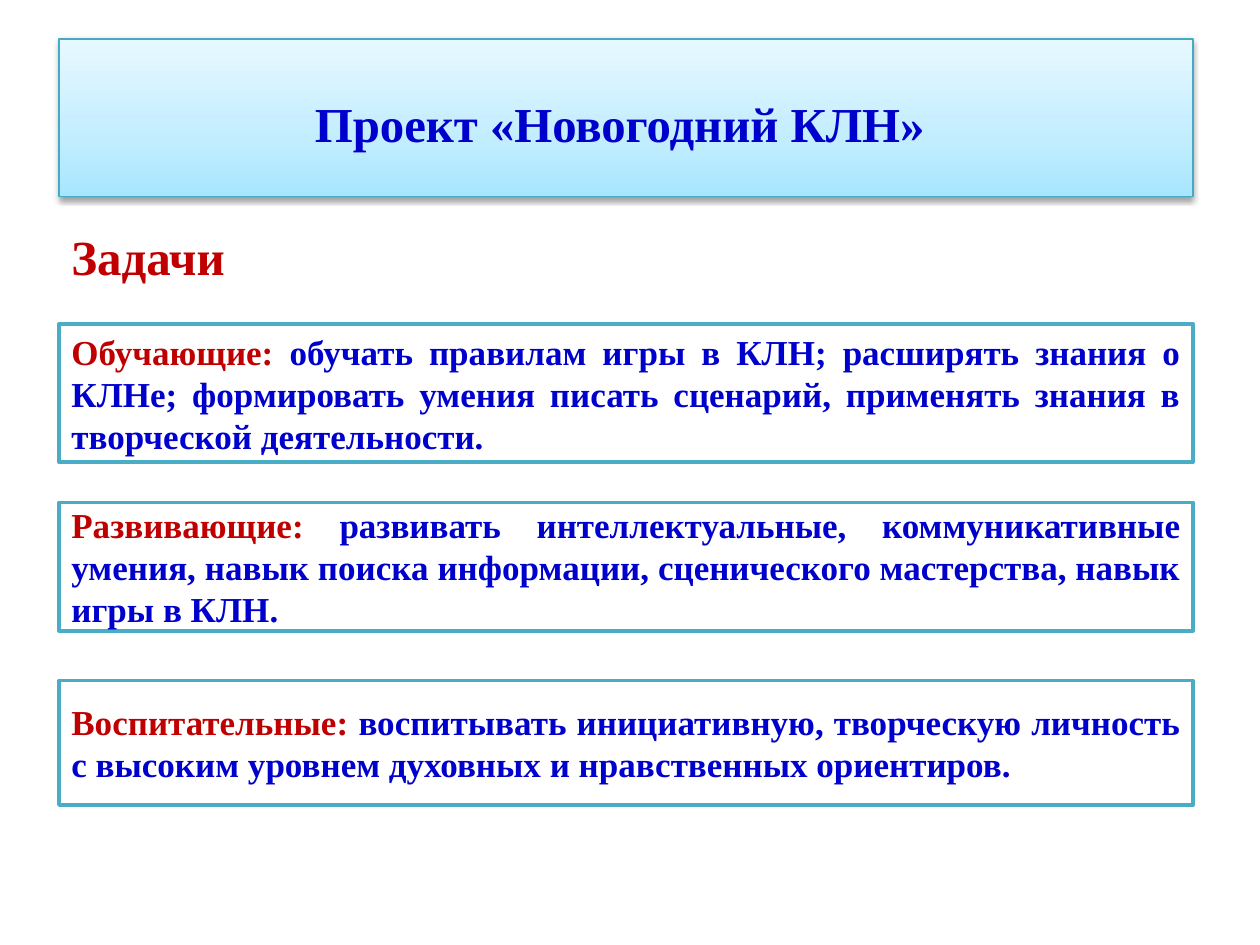
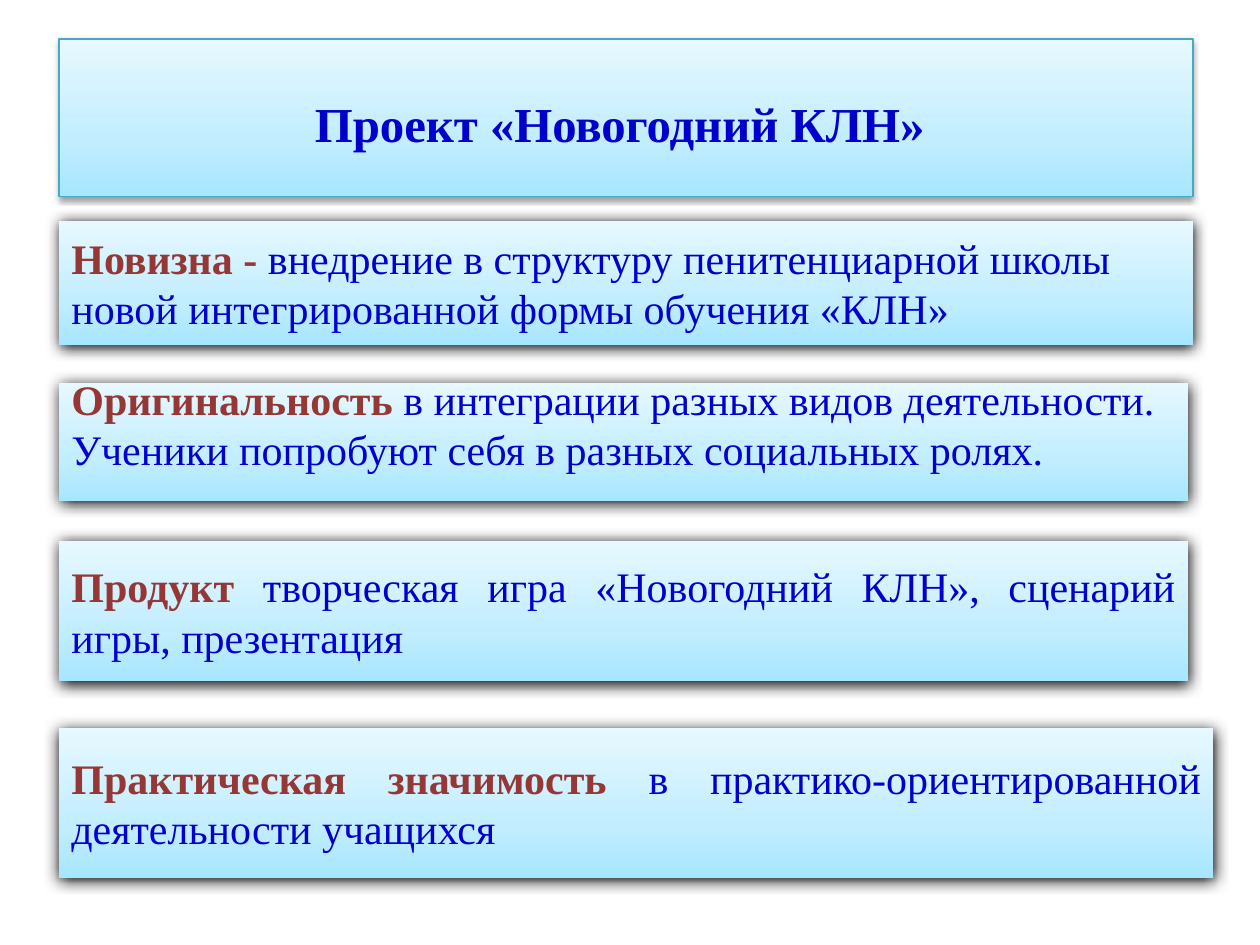
from lxml import etree
from pptx import Presentation
from pptx import util as u
from pptx.dml.color import RGBColor
from pptx.enum import shapes, text
from pptx.oxml.ns import qn

COLORS = {
    "blue": "0000CC", "red": "C00000", "brown": "953735",
    "white": "FFFFFF", "border": "4BACC6", "title_border": "46AAC5",
    "shadow": "000000",
}
SKY_STOPS = [(0, "A7E6FF"), (35, "C1EDFF"), (100, "E7F8FF")]
FONT = "Times New Roman"
LEFT, WIDTH = 1.19, 22.86
BODY_TOP = 4.45
TITLE = "Проект «Новогодний КЛН»"
LEFT_ALIGN, JUSTIFY, CENTER = (
    text.PP_ALIGN.LEFT, text.PP_ALIGN.JUSTIFY, text.PP_ALIGN.CENTER)

# top, height, label, wording
TASKS = [
    (6.53, 2.79, "Обучающие: ",
     "обучать правилам игры в КЛН; расширять знания о КЛНе; формировать "
     "умения писать сценарий, применять знания в творческой деятельности."),
    (10.13, 2.59, "Развивающие: ",
     "развивать интеллектуальные, коммуникативные умения, навык поиска "
     "информации, сценического мастерства, навык игры в КЛН."),
    (13.72, 2.51, "Воспитательные: ",
     "воспитывать инициативную, творческую личность с высоким уровнем "
     "духовных и нравственных ориентиров."),
]

# top, width, height, alignment, extra bottom inset, label, wording
FEATURES = [
    (BODY_TOP, WIDTH, 2.51, LEFT_ALIGN, 0, "Новизна - ",
     "внедрение в структуру пенитенциарной школы новой интегрированной "
     "формы обучения «КЛН»"),
    (7.72, 22.76, 2.39, LEFT_ALIGN, 0.75, "Оригинальность ",
     "в интеграции разных видов деятельности. Ученики попробуют себя "
     "в разных социальных ролях."),
    (10.9, 22.76, 2.84, JUSTIFY, 0, "Продукт ",
     "творческая игра «Новогодний КЛН», сценарий игры, презентация"),
    (14.68, 23.27, 3.02, JUSTIFY, 0, "Практическая значимость ",
     "в практико-ориентированной деятельности учащихся"),
]


def rgb(name):
    return RGBColor.from_string(COLORS[name])


def add_box(page, top, width, height, border=None, border_width=0):
    box = page.shapes.add_shape(
        shapes.MSO_SHAPE.RECTANGLE,
        u.Cm(LEFT), u.Cm(top), u.Cm(width), u.Cm(height))
    box.shadow.inherit = False
    if border:
        box.line.color.rgb = rgb(border)
        box.line.width = u.Pt(border_width)
    else:
        box.line.fill.background()
    box.text_frame.word_wrap = True
    box.text_frame.vertical_anchor = text.MSO_ANCHOR.MIDDLE
    return box


def fill_sky(box):
    """Fill with the three-stop blue gradient, lightest at the top."""
    box.fill.gradient()
    box.fill.gradient_angle = 90
    stops = box.element.spPr.find(".//" + qn("a:gsLst"))
    for stop in list(stops):
        stops.remove(stop)
    for percent, color in SKY_STOPS:
        stop = etree.SubElement(stops, qn("a:gs"), pos=str(percent * 1000))
        etree.SubElement(stop, qn("a:srgbClr"), val=color)


def drop_shadow(box, blur, distance, opacity):
    """Cast a shadow straight down; lengths in points, opacity in percent."""
    effects = box.element.spPr.find(qn("a:effectLst"))
    shadow = etree.SubElement(
        effects, qn("a:outerShdw"), blurRad=str(u.Pt(blur)),
        dist=str(u.Pt(distance)), dir="5400000", rotWithShape="0")
    color = etree.SubElement(shadow, qn("a:srgbClr"), val=COLORS["shadow"])
    etree.SubElement(color, qn("a:alpha"), val=str(opacity * 1000))


def write(box, size, spans, align):
    """Write one paragraph from (wording, color, bold) spans."""
    para = box.text_frame.paragraphs[0]
    para.alignment = align
    para.font.name = FONT
    para.font.size = u.Pt(size)
    for wording, color, bold in spans:
        span = para.add_run()
        span.text = wording
        span.font.name = FONT
        span.font.size = u.Pt(size)
        span.font.bold = bold
        span.font.color.rgb = rgb(color)


def add_title_band(page):
    band = add_box(page, 0.79, WIDTH, 3.17, "title_border", 0.75)
    fill_sky(band)
    drop_shadow(band, 3.1, 1.6, 38)
    band.text_frame.margin_top = u.Cm(0.32)
    band.text_frame.margin_right = u.Cm(0.5)
    write(band, 27.9, [(TITLE, "blue", True)], CENTER)


def add_heading(page, wording):
    box = page.shapes.add_textbox(
        u.Cm(LEFT), u.Cm(BODY_TOP), u.Cm(22.94), u.Cm(12.57))
    box.text_frame.word_wrap = True
    write(box, 28, [(wording, "red", True)], JUSTIFY)


def add_task(page, top, height, label, wording):
    box = add_box(page, top, WIDTH, height, "border", 2)
    box.fill.solid()
    box.fill.fore_color.rgb = rgb("white")
    write(box, 20, [(label, "red", True), (wording, "blue", True)], JUSTIFY)


def add_feature(page, top, width, height, align, lift, label, wording):
    box = add_box(page, top, width, height)
    fill_sky(box)
    drop_shadow(box, 8.5, 1, 100)
    box.text_frame.margin_bottom = u.Cm(0.13 + lift)
    write(box, 24, [(label, "brown", True), (wording, "blue", False)], align)


def add_page(deck):
    page = deck.slides.add_slide(deck.slide_layouts[6])
    add_title_band(page)
    return page


def main():
    deck = Presentation()
    deck.slide_width, deck.slide_height = u.Cm(25.4), u.Cm(19.05)

    tasks_page = add_page(deck)
    add_heading(tasks_page, "Задачи")
    for task in TASKS:
        add_task(tasks_page, *task)

    features_page = add_page(deck)
    for feature in FEATURES:
        add_feature(features_page, *feature)

    deck.save("out.pptx")


if __name__ == "__main__":
    main()
